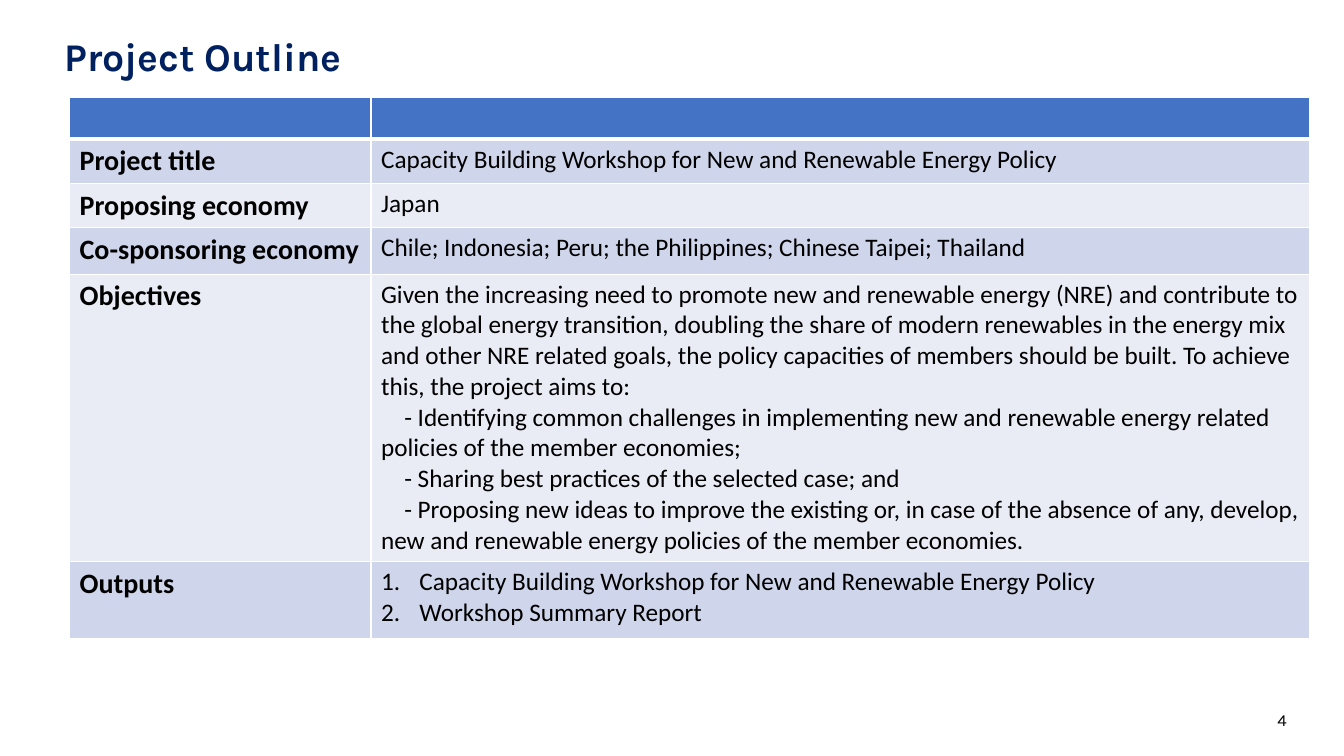
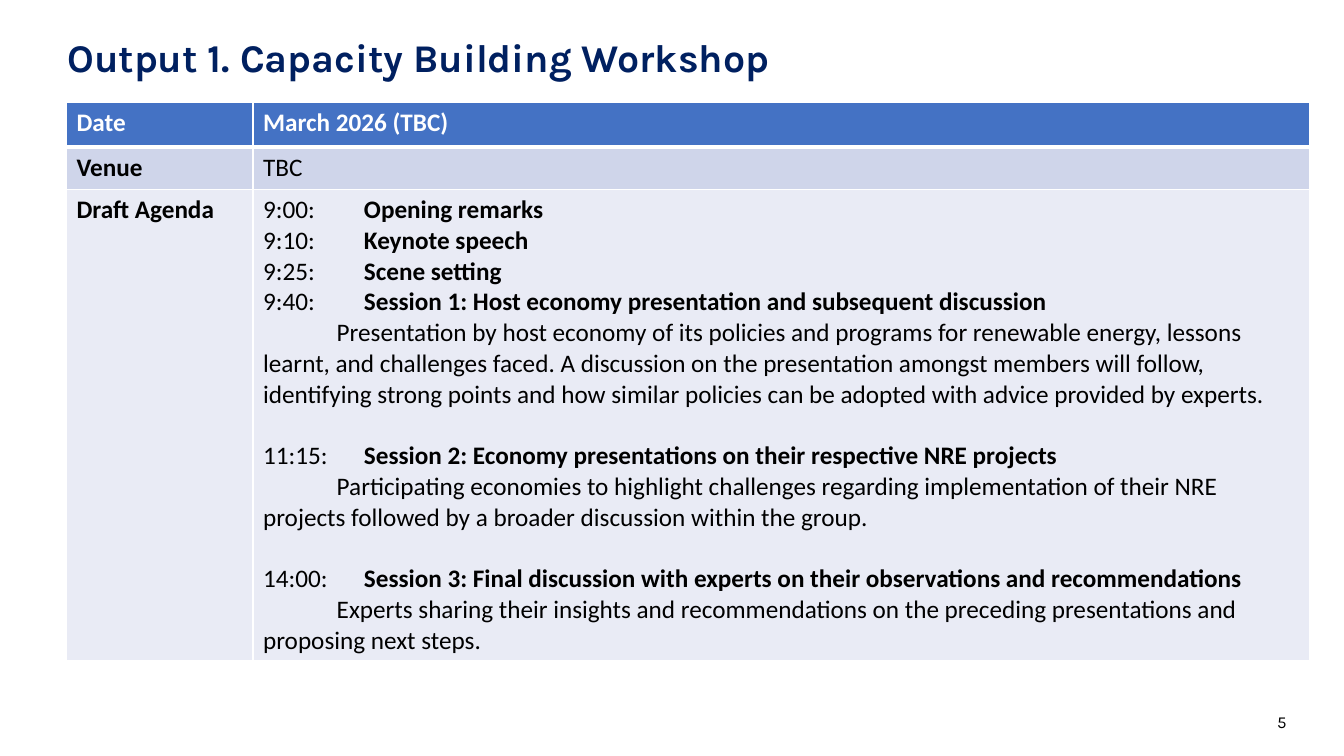
from dataclasses import dataclass

from lxml import etree
from pptx import Presentation
from pptx import util as u
from pptx.dml.color import RGBColor
from pptx.enum import text
from pptx.oxml.ns import qn

COLOURS = {
    "title": "002060",
    "header": "4472C4",
    "odd": "CFD5EA",
    "even": "E9EBF5",
    "text": "000000",
    "white": "FFFFFF",
}
TITLE_FONT = "Karla"
TABLE_FONT = "Calibri"
BODY_SIZE = 18
LINE_HEIGHT = 22
TIME_TAB = 0.73


@dataclass(frozen=True)
class Run:
    text: str
    bold: bool = False


@dataclass(frozen=True)
class Para:
    runs: tuple[Run, ...]
    left: float = 0
    first: float = 0
    tab: float = 0
    before: float = 0
    numbered: bool = False


@dataclass(frozen=True)
class Row:
    height: float
    label: str = ""
    content: tuple[Para, ...] = ()


@dataclass(frozen=True)
class Box:
    left: float
    top: float
    width: float
    height: float

    def lengths(self) -> tuple:
        return tuple(map(u.Inches, (self.left, self.top, self.width, self.height)))


@dataclass(frozen=True)
class Page:
    number: str
    number_top: float
    title: str
    title_box: Box
    table_left: float
    table_top: float
    columns: tuple[float, float]
    label_size: int
    rows: tuple[Row, ...]


def plain(words: str, first: float = 0) -> Para:
    return Para((Run(words),), first=first)


def numbered(words: str) -> Para:
    return Para((Run(words),), left=0.38, first=-0.38, numbered=True)


def agenda(time: str, subject: str, gap: float = 0) -> Para:
    return Para((Run(f"{time}:\t"), Run(subject, True)), tab=TIME_TAB, before=gap)


def style_font(font, name: str, size: float, colour: str, bold: bool = False) -> None:
    font.name = name
    font.size = u.Pt(size)
    font.bold = bold
    font.color.rgb = RGBColor.from_string(COLOURS[colour])


def add_label(slide, box: Box, words: str, size: float, colour: str, bold: bool = False):
    frame = slide.shapes.add_textbox(*box.lengths()).text_frame
    frame.word_wrap = True
    paragraph = frame.paragraphs[0]
    run = paragraph.add_run()
    run.text = words
    style_font(run.font, TITLE_FONT, size, colour, bold)
    return frame


def add_title(slide, page: Page) -> None:
    frame = add_label(slide, page.title_box, page.title, 28, "title", True)
    paragraph = frame.paragraphs[0]
    paragraph.alignment = text.PP_ALIGN.JUSTIFY
    paragraph.line_spacing = 0.98
    paragraph.space_after = u.Pt(8)
    paragraph._p.get_or_add_pPr().set("marL", str(u.Inches(0.35)))


def add_page_number(slide, page: Page) -> None:
    frame = add_label(slide, Box(9.86, page.number_top, 3, 0.4), page.number, 12, "text")
    frame.vertical_anchor = text.MSO_ANCHOR.MIDDLE
    frame.paragraphs[0].alignment = text.PP_ALIGN.RIGHT


def set_borders(cell, top: float, bottom: float) -> None:
    properties = cell._tc.get_or_add_tcPr()
    sides = (("lnL", 1), ("lnR", 1), ("lnT", top), ("lnB", bottom))
    for position, (side, width) in enumerate(sides):
        line = etree.Element(qn(f"a:{side}"), w=str(u.Pt(width)))
        fill = etree.SubElement(line, qn("a:solidFill"))
        etree.SubElement(fill, qn("a:srgbClr"), val=COLOURS["white"])
        properties.insert(position, line)


def format_paragraph(paragraph, para: Para) -> None:
    properties = paragraph._p.get_or_add_pPr()
    properties.set("marL", str(u.Inches(para.left)))
    properties.set("indent", str(u.Inches(para.first)))
    if para.numbered:
        etree.SubElement(properties, qn("a:buAutoNum"), type="arabicPeriod")
    if para.tab:
        tabs = etree.SubElement(properties, qn("a:tabLst"))
        etree.SubElement(tabs, qn("a:tab"), pos=str(u.Inches(para.tab)), algn="l")
    if para.before:
        paragraph.space_before = u.Pt(para.before)


def fill_cell(cell, paras: tuple[Para, ...], size: float, row_index: int) -> None:
    is_header = row_index == 0
    band = "header" if is_header else ("even", "odd")[row_index % 2]
    cell.fill.solid()
    cell.fill.fore_color.rgb = RGBColor.from_string(COLOURS[band])
    set_borders(cell, 3 if row_index == 1 else 1, 3 if is_header else 1)
    frame = cell.text_frame
    for index, para in enumerate(paras):
        paragraph = frame.add_paragraph() if index else frame.paragraphs[0]
        format_paragraph(paragraph, para)
        for item in para.runs:
            run = paragraph.add_run()
            run.text = item.text
            colour = "white" if is_header else "text"
            style_font(run.font, TABLE_FONT, size, colour, item.bold or is_header)


def add_details_table(slide, page: Page) -> None:
    box = Box(page.table_left, page.table_top, sum(page.columns),
              sum(row.height for row in page.rows))
    table = slide.shapes.add_table(len(page.rows), 2, *box.lengths()).table
    table.horz_banding = False
    for column, width in zip(table.columns, page.columns):
        column.width = u.Inches(width)
    for index, row in enumerate(page.rows):
        table.rows[index].height = u.Inches(row.height)
        label = (Para((Run(row.label, True),)),) if row.label else ()
        fill_cell(table.cell(index, 0), label, page.label_size, index)
        fill_cell(table.cell(index, 1), row.content, BODY_SIZE, index)


OUTLINE_ROWS = (
    Row(0.41),
    Row(0.44, "Project title", (
        plain("Capacity Building Workshop for New and Renewable Energy Policy"),
    )),
    Row(0.44, "Proposing economy", (plain("Japan"),)),
    Row(0.46, "Co-sponsoring economy", (
        plain("Chile; Indonesia; Peru; the Philippines; Chinese Taipei; Thailand"),
    )),
    Row(2.85, "Objectives", (
        plain("Given the increasing need to promote new and renewable energy (NRE) and "
              "contribute to the global energy transition, doubling the share of modern "
              "renewables in the energy mix and other NRE related goals, the policy "
              "capacities of members should be built. To achieve this, the project aims to:"),
        plain("- Identifying common challenges in implementing new and renewable energy "
              "related policies of the member economies;", 0.23),
        plain("- Sharing best practices of the selected case; and", 0.23),
        plain("- Proposing new ideas to improve the existing or, in case of the absence of "
              "any, develop, new and renewable energy policies of the member economies.", 0.23),
    )),
    Row(0.77, "Outputs", (
        numbered("Capacity Building Workshop for New and Renewable Energy Policy"),
        numbered("Workshop Summary Report"),
    )),
)

WORKSHOP_ROWS = (
    Row(0.44, "Date", (plain("March 2026 (TBC)"),)),
    Row(0.42, "Venue", (plain("TBC"),)),
    Row(4.67, "Draft Agenda", (
        agenda("9:00", "Opening remarks"),
        agenda("9:10", "Keynote speech"),
        agenda("9:25", "Scene setting"),
        agenda("9:40", "Session 1: Host economy presentation and subsequent discussion"),
        plain("Presentation by host economy of its policies and programs for renewable "
              "energy, lessons learnt, and challenges faced. A discussion on the "
              "presentation amongst members will follow, identifying strong points and how "
              "similar policies can be adopted with advice provided by experts.", TIME_TAB),
        agenda("11:15", "Session 2: Economy presentations on their respective NRE projects",
               LINE_HEIGHT),
        plain("Participating economies to highlight challenges regarding implementation of "
              "their NRE projects followed by a broader discussion within the group.",
              TIME_TAB),
        agenda("14:00", "Session 3: Final discussion with experts on their observations "
               "and recommendations", LINE_HEIGHT),
        plain("Experts sharing their insights and recommendations on the preceding "
              "presentations and proposing next steps.", TIME_TAB),
    )),
)

PAGES = (
    Page("4", 6.94, "Project Outline", Box(0.19, 0.29, 6.47, 0.57),
         0.69, 0.97, (2.99, 9.31), 20, OUTLINE_ROWS),
    Page("5", 6.96, "Output 1. Capacity Building Workshop", Box(0.22, 0.3, 12.13, 0.54),
         0.66, 1.02, (1.85, 10.48), 18, WORKSHOP_ROWS),
)


def main() -> None:
    presentation = Presentation()
    presentation.slide_width = u.Inches(13.33)
    presentation.slide_height = u.Inches(7.5)
    for page in PAGES:
        slide = presentation.slides.add_slide(presentation.slide_layouts[6])
        add_page_number(slide, page)
        add_title(slide, page)
        add_details_table(slide, page)
    presentation.save("out.pptx")


if __name__ == "__main__":
    main()
